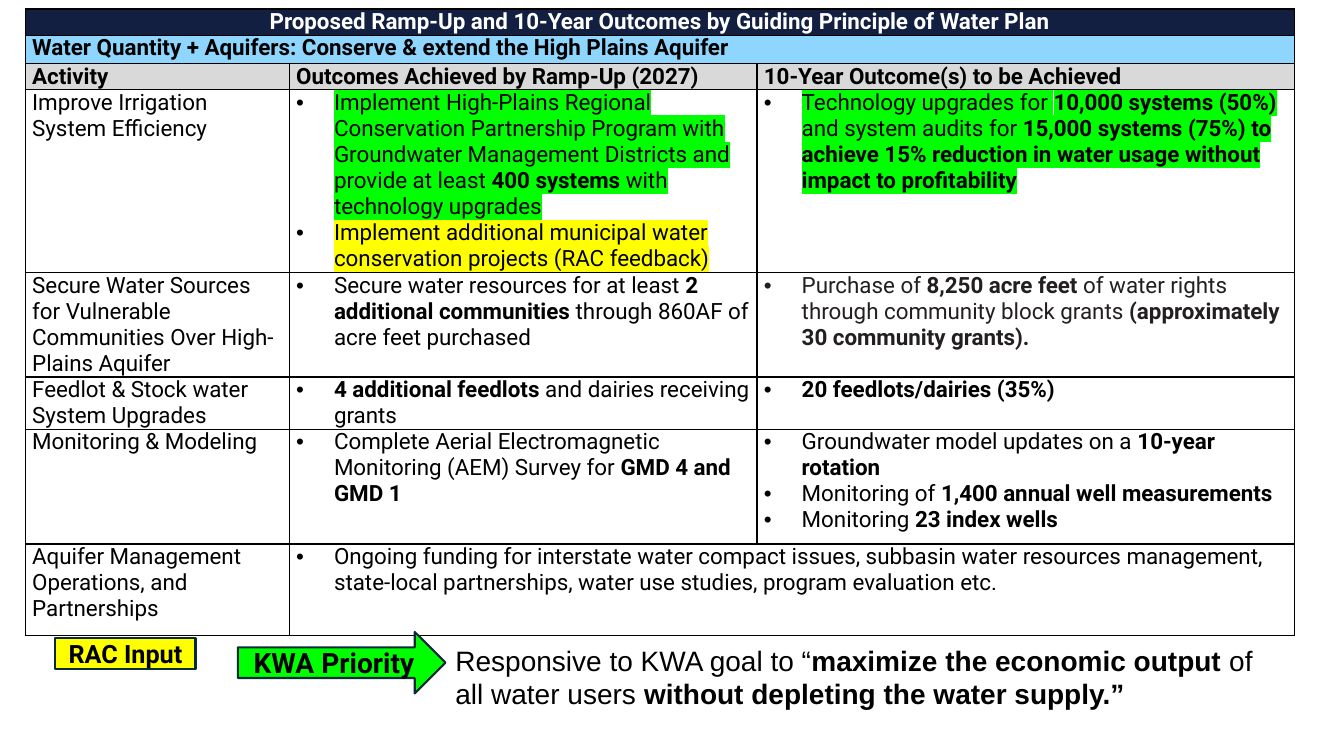
from dataclasses import dataclass

from lxml import etree
from pptx import Presentation
from pptx import util as u
from pptx.dml import color as col
from pptx.enum import shapes, text
from pptx.oxml import ns

INK, NAVY, SKY, GREY = "000000", "121F40", "8FD6FF", "D9D9D9"
GREEN, YELLOW, EDGE = "00FF00", "FFFF00", "092A39"
MID = text.PP_ALIGN.CENTER


@dataclass
class Para:
    """One paragraph; ** switches bold on and off."""
    words: str
    mark: str = ""
    ink: str = INK
    dot: bool = True


@dataclass
class Cell:
    row: int
    col: int
    paras: list[Para]
    fill: str = ""
    span: int = 1


@dataclass
class Badge:
    kind: shapes.MSO_SHAPE
    box: tuple[float, float, float, float]
    words: str
    size: float
    fill: str


def rgb(code: str) -> col.RGBColor:
    return col.RGBColor.from_string(code)


def add_xml(home, tag: str, **attrs: str):
    return etree.SubElement(home, ns.qn(tag), attrs)


def write(para, words: str, size: float, face: str, ink: str = INK, mark: str = "") -> None:
    for i, part in enumerate(words.split("**")):
        if not part:
            continue
        run = para.add_run()
        run.text = part
        font = run.font
        font.size, font.bold = u.Pt(size), i % 2 == 1
        font.color.rgb = rgb(ink)
        if mark:
            add_xml(add_xml(font._element, "a:highlight"), "a:srgbClr", val=mark)
        font.name = face


def add_dot(para) -> None:
    props = para._p.get_or_add_pPr()
    props.set("marL", str(u.Pt(27)))
    props.set("indent", str(u.Pt(-27)))
    add_xml(props, "a:buFont", typeface="Arial")
    add_xml(props, "a:buChar", char="•")


def border(cell) -> None:
    props = cell._tc.get_or_add_tcPr()
    for side in "LRTB":
        line = add_xml(props, f"a:ln{side}", w=str(u.Pt(1)))
        add_xml(add_xml(line, "a:solidFill"), "a:srgbClr", val=INK)


def fill_cell(table, item: Cell) -> None:
    cell = table.cell(item.row, item.col)
    if item.span > 1:
        cell.merge(table.cell(item.row, item.col + item.span - 1))
    if item.fill:
        cell.fill.solid()
        cell.fill.fore_color.rgb = rgb(item.fill)
    frame = cell.text_frame
    for i, item_para in enumerate(item.paras):
        para = frame.add_paragraph() if i else frame.paragraphs[0]
        if item_para.dot:
            add_dot(para)
        else:
            para.space_after = u.Pt(6)
        write(para, item_para.words, 16, "Roboto", item_para.ink, item_para.mark)


def add_badge(slide, item: Badge) -> None:
    shape = slide.shapes.add_shape(item.kind, *map(u.Pt, item.box))
    shape.shadow.inherit = False
    shape.fill.solid()
    shape.fill.fore_color.rgb = rgb(item.fill)
    shape.line.color.rgb = rgb(EDGE)
    shape.line.width = u.Pt(1.5)
    frame = shape.text_frame
    frame.word_wrap = True
    frame.vertical_anchor = text.MSO_ANCHOR.MIDDLE
    para = frame.paragraphs[0]
    para.alignment = MID
    write(para, item.words, item.size, "Roboto")


def label(words: str) -> list[Para]:
    return [Para(words, dot=False)]


# Table content
WIDTHS = (188.6, 334.1, 383.8)
HEIGHTS = (16.6, 20.2, 16.6, 131, 56.9, 36, 82.1, 65.5)
HEADS = ("Activity", "Outcomes Achieved by Ramp-Up (2027)", "10-Year Outcome(s) to be Achieved")
TITLE = "**Proposed Ramp-Up and 10-Year Outcomes by Guiding Principle of Water Plan**"
THEME = "**Water Quantity + Aquifers: Conserve & extend the High Plains Aquifer**"
BODY = [
    ("Improve Irrigation System Efficiency",
     [Para("Implement High-Plains Regional Conservation Partnership Program with Groundwater "
           "Management Districts and provide at least **400 systems** with technology upgrades", GREEN),
      Para("Implement additional municipal water conservation projects (RAC feedback)", YELLOW)],
     [Para("Technology upgrades for **10,000 systems (50%)** and system audits for **15,000 systems "
           "(75%) to achieve 15% reduction in water usage without impact to profitability**", GREEN)]),
    ("Secure Water Sources for Vulnerable Communities Over High-Plains Aquifer",
     [Para("Secure water resources for at least **2 additional communities** through 860AF of "
           "acre feet purchased")],
     [Para("Purchase of **8,250 acre feet **of water rights through community block grants "
           "**(approximately 30 community grants).**", ink="231F20")]),
    ("Feedlot & Stock water System Upgrades",
     [Para("**4 additional feedlots** and dairies receiving grants")],
     [Para("**20 feedlots/dairies (35%)**")]),
    ("Monitoring & Modeling",
     [Para("Complete Aerial Electromagnetic Monitoring (AEM) Survey for **GMD 4 and GMD 1**")],
     [Para("Groundwater model updates on a **10-year rotation**"),
      Para("Monitoring of **1,400 annual well measurements**"),
      Para("Monitoring **23 index wells**")]),
    ("Aquifer Management Operations, and Partnerships",
     [Para("Ongoing funding for interstate water compact issues, subbasin water resources "
           "management, state-local partnerships, water use studies, program evaluation etc.")]),
]
BADGES = [
    Badge(shapes.MSO_SHAPE.RECTANGLE, (39.6, 455.8, 100.1, 22.3), "**RAC Input**", 18, YELLOW),
    Badge(shapes.MSO_SHAPE.RIGHT_ARROW, (169.9, 451.4, 148.3, 43.9), "**KWA Priority**", 20, GREEN),
]
GOAL = ("Responsive to KWA goal to “**maximize the economic output **of all water users "
        "**without depleting the water supply.”**")


def list_cells() -> list[Cell]:
    cells = [Cell(0, 0, [Para(TITLE, ink="FFFFFF", dot=False)], NAVY, 3),
             Cell(1, 0, label(THEME), SKY, 3)]
    cells += [Cell(2, i, label(f"**{head}**"), GREY) for i, head in enumerate(HEADS)]
    for row, (name, *goals) in enumerate(BODY, 3):
        cells.append(Cell(row, 0, label(name)))
        span = 3 - len(goals)
        cells += [Cell(row, i, paras, span=span) for i, paras in enumerate(goals, 1)]
    return cells


def add_table(slide) -> None:
    frame = slide.shapes.add_table(len(HEIGHTS), len(WIDTHS), u.Pt(18), u.Pt(6.5),
                                   u.Pt(sum(WIDTHS)), u.Pt(sum(HEIGHTS)))
    table = frame.table
    table.first_row = table.horz_banding = False
    for part, width in zip(table.columns, WIDTHS):
        part.width = u.Pt(width)
    for part, height in zip(table.rows, HEIGHTS):
        part.height = u.Pt(height)
    for cell in table.iter_cells():
        cell.margin_left = cell.margin_right = u.Pt(5)
        cell.margin_top = cell.margin_bottom = 0
        border(cell)
        cell.fill.background()
    for item in list_cells():
        fill_cell(table, item)
    title = table.cell(0, 0)
    title.vertical_anchor = text.MSO_ANCHOR.MIDDLE
    title.text_frame.paragraphs[0].alignment = MID


def add_goal(slide) -> None:
    box = slide.shapes.add_textbox(u.Pt(318.2), u.Pt(455.8), u.Pt(585.4), u.Pt(55.4))
    frame = box.text_frame
    frame.word_wrap = True
    frame.auto_size = text.MSO_AUTO_SIZE.SHAPE_TO_FIT_TEXT
    write(frame.paragraphs[0], GOAL, 20, "Arial")


def main() -> None:
    deck = Presentation()
    deck.slide_width, deck.slide_height = u.Pt(960), u.Pt(540)
    slide = deck.slides.add_slide(deck.slide_layouts[6])
    add_table(slide)
    # Key and goal below the table
    add_goal(slide)
    for item in BADGES:
        add_badge(slide, item)
    deck.save("out.pptx")


if __name__ == "__main__":
    main()
